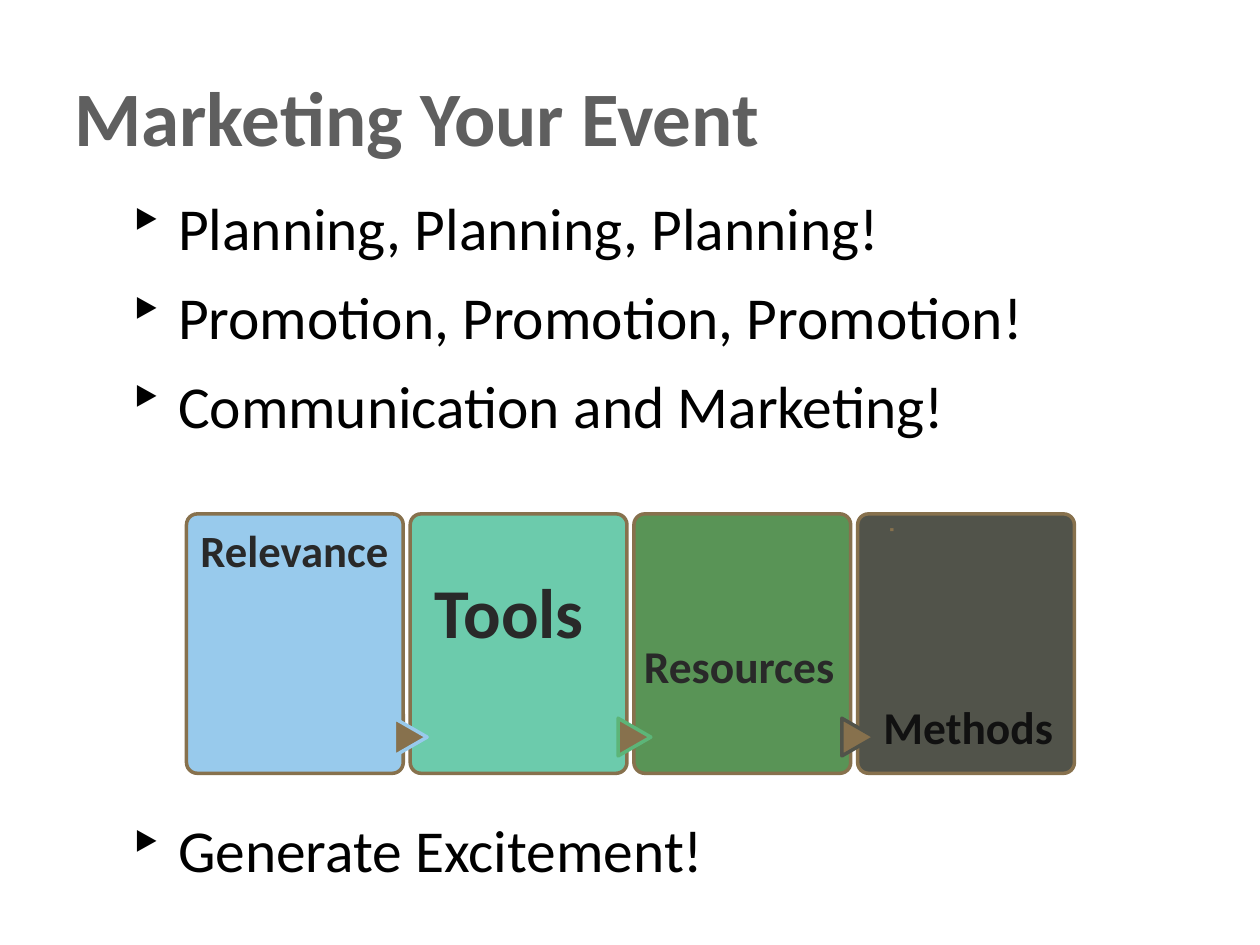
import pptx
import pptx.util
import pptx.dml.color
import pptx.enum.shapes
import pptx.enum.text
import pptx.oxml
import pptx.oxml.ns
from pptx.util import Cm, Pt

SHAPES = pptx.enum.shapes.MSO_SHAPE
BROWN = "87714D"


def color(hex_string):
    return pptx.dml.color.RGBColor.from_string(hex_string)


def add_text(left, top, width, height, lines, size, hex_color, bold=False, wrap=True):
    box = slide.shapes.add_textbox(Cm(left), Cm(top), Cm(width), Cm(height))
    frame = box.text_frame
    frame.word_wrap = wrap
    frame.margin_left = frame.margin_right = Cm(0.13)
    frame.margin_top = frame.margin_bottom = Cm(0.13)
    frame.text = "\n".join(lines)
    for paragraph in frame.paragraphs:
        paragraph.font.name = "Calibri"
        paragraph.font.size = Pt(size)
        paragraph.font.bold = bold
        paragraph.font.color.rgb = color(hex_color)
    return box


presentation = pptx.Presentation()
presentation.slide_width = Cm(25.4)
presentation.slide_height = Cm(19.05)
slide = presentation.slides.add_slide(presentation.slide_layouts[6])

# Title
add_text(1.37, 1.27, 18.69, 3.18, ["Marketing Your Event"], 44, "5F5F5F", bold=True)

# Bulleted list, with room for the tiles before the last item
items = [
    "Planning, Planning, Planning!",
    "Promotion, Promotion, Promotion!",
    "Communication and Marketing!",
    "Generate Excitement!",
]
bullet_list = add_text(2.46, 3.73, 19.43, 14.73, items, 34, "000000")
for paragraph, space in zip(bullet_list.text_frame.paragraphs, (0, 10, 10, 213)):
    paragraph.space_before = Pt(space)
    properties = paragraph._p.get_or_add_pPr()
    properties.set("marL", str(Cm(1)))
    properties.set("indent", str(Cm(-1)))
    bullet = pptx.oxml.parse_xml(
        f'<a:buChar {pptx.oxml.ns.nsdecls("a")} char="‣"/>')
    properties.insert_element_before(bullet, "a:tabLst", "a:defRPr", "a:extLst")

# Tiles, each later one overlapped by an arrow from the tile before it
tile_fills = ["98CAEC", "6CCBAC", "599456", "51534A"]
arrow_lines = ["98CAEC", "5CB578", "51534A"]
pitch = 4.51
for index, tile_fill in enumerate(tile_fills):
    parts = [(SHAPES.ROUNDED_RECTANGLE, 3.76 + pitch * index, 10.36, 4.37, 5.23,
              tile_fill, BROWN)]
    if index > 0:
        parts.append((SHAPES.FLOWCHART_EXTRACT, 7.9 + pitch * (index - 1), 14.53, 0.76, 0.66,
                      BROWN, arrow_lines[index - 1]))
    for kind, left, top, width, height, fill, line in parts:
        shape = slide.shapes.add_shape(kind, Cm(left), Cm(top), Cm(width), Cm(height))
        shape.shadow.inherit = False
        shape.fill.solid()
        shape.fill.fore_color.rgb = color(fill)
        shape.line.color.rgb = color(line)
        shape.line.width = Pt(2)
        if kind == SHAPES.ROUNDED_RECTANGLE:
            shape.adjustments[0] = 0.05
        else:
            shape.rotation = 90

# Small rotated dot in the last tile
dot = add_text(15.57, 12.09, 4.29, 0.86, ["."], 18, BROWN)
dot.rotation = 270
dot.text_frame.margin_left = dot.text_frame.margin_bottom = 0
dot.text_frame.margin_top = Cm(0.18)
dot.text_frame.margin_right = Cm(0.23)
dot_paragraph = dot.text_frame.paragraphs[0]
dot_paragraph.alignment = pptx.enum.text.PP_ALIGN.RIGHT
dot_paragraph.line_spacing = 0.9
dot_paragraph.font.name = "Arial"

# Tile labels
labels = [
    ("Relevance", 3.91, 10.41, 4.11, 1.35, 25.5, "292929"),
    ("Tools", 8.64, 11.33, 3.63, 1.96, 40, "292929"),
    ("Resources", 12.85, 12.73, 4.22, 1.37, 26, "292929"),
    ("Methods", 17.68, 13.97, 3.78, 1.37, 26, "111111"),
]
for label, left, top, width, height, size, label_color in labels:
    add_text(left, top, width, height, [label], size, label_color, bold=True, wrap=False)

presentation.save("out.pptx")
